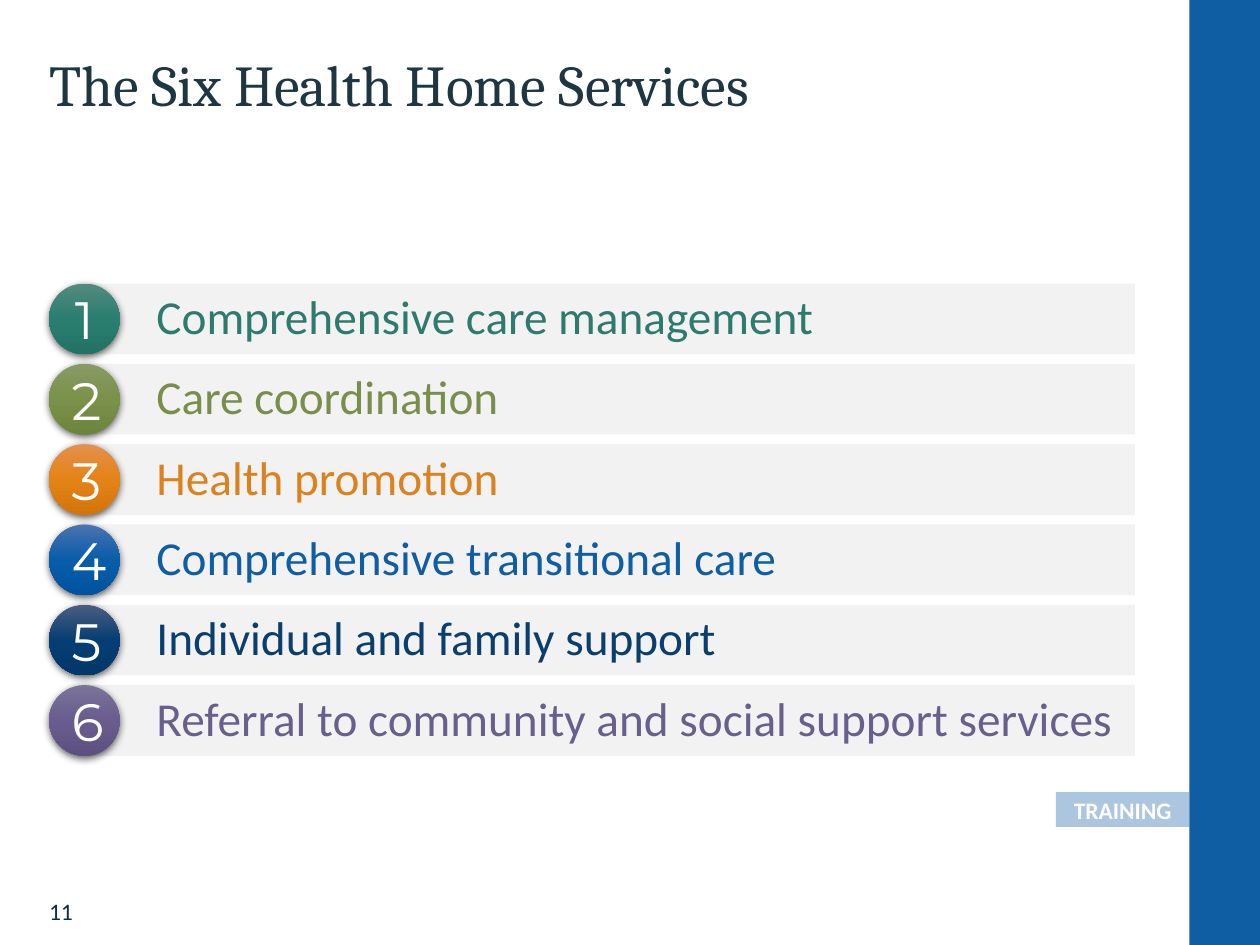
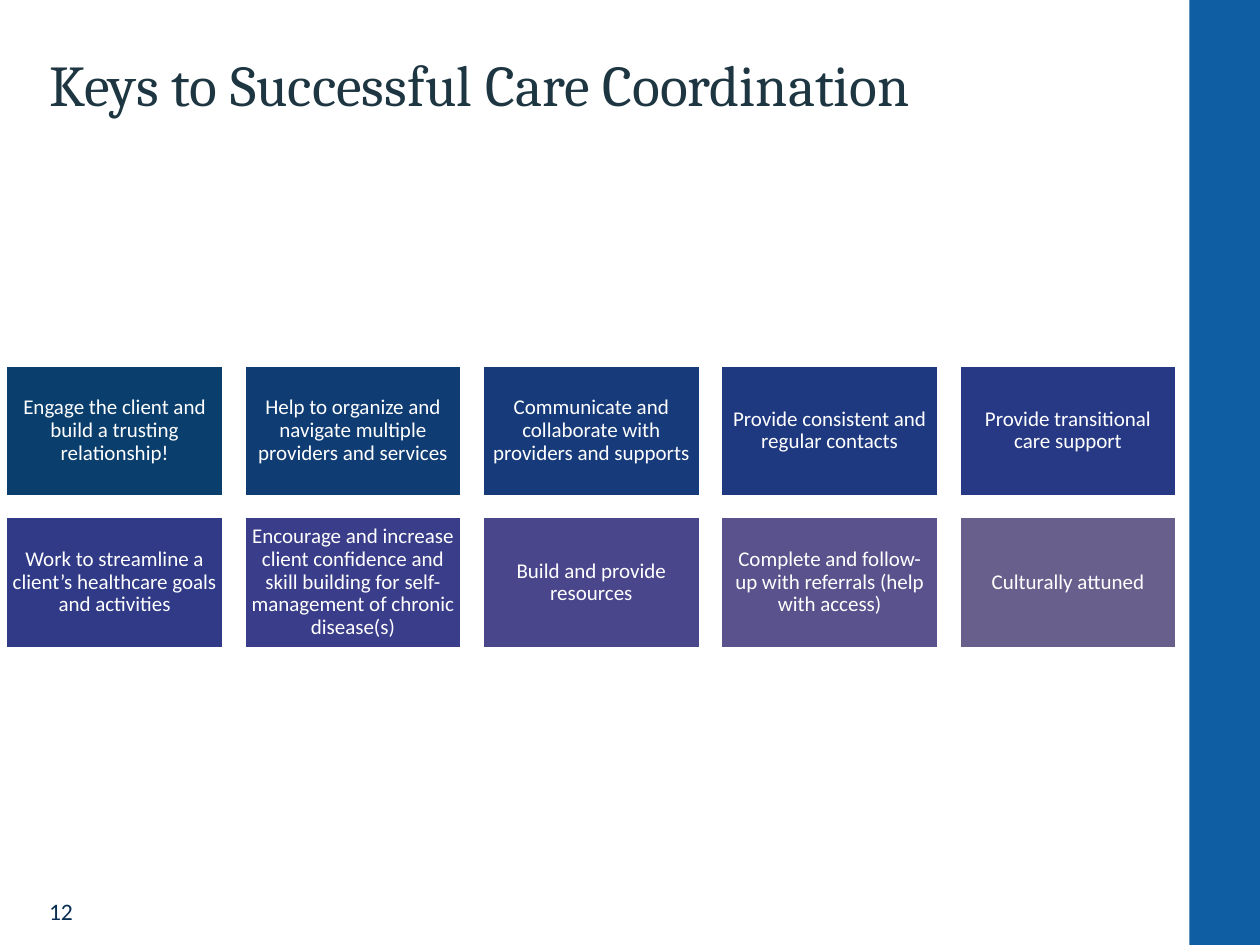
from dataclasses import dataclass

from lxml import etree
from pptx import Presentation
from pptx.dml.color import RGBColor
from pptx.enum.shapes import MSO_SHAPE
from pptx.enum.text import MSO_ANCHOR, PP_ALIGN
from pptx.oxml.ns import qn
from pptx.util import Pt

RECTANGLE, ELLIPSE = MSO_SHAPE.RECTANGLE, MSO_SHAPE.OVAL
TOP, MIDDLE = MSO_ANCHOR.TOP, MSO_ANCHOR.MIDDLE
LEFT, CENTER = PP_ALIGN.LEFT, PP_ALIGN.CENTER

SERVICES_TITLE = "The Six Health Home Services"
SERVICES = [
    ("Comprehensive care management", "2E7A6D", ("548A7F", "2A7E70", "227365")),
    ("Care coordination", "798E4C", ("899B65", "7A9149", "6E843E")),
    ("Health promotion", "DB821E", ("E4904E", "E48315", "D3740A")),
    ("Comprehensive transitional care", "0F5DA3", ("4C72AF", "085DAA", "00539E")),
    ("Individual and family support", "0A3E6D", ("4B5D80", "053E72", "00386A")),
    ("Referral to community and social support services", "695F8C",
     ("7B7399", "685D8E", "5B5080")),
]
TAG = "TRAINING"

KEYS_TITLE = "Keys to Successful Care Coordination"
KEYS = [
    ("Engage the client and build a trusting relationship!", "0A3E6D"),
    ("Help to organize and navigate multiple providers and services", "103C74"),
    ("Communicate and collaborate with providers and supports", "163A7A"),
    ("Provide consistent and regular contacts", "1E3980"),
    ("Provide transitional care support", "273984"),
    ("Work to streamline a client’s healthcare goals and activities", "303A87"),
    ("Encourage and increase client confidence and skill building for "
     "self-management of chronic disease(s)", "3A3D8A"),
    ("Build and provide resources", "4A468C"),
    ("Complete and follow-up with referrals (help with access)", "5A528C"),
    ("Culturally attuned", "695F8C"),
]
KEY_COLUMNS = 5


@dataclass(frozen=True)
class Theme:
    heading_font: str = "Cambria"
    body_font: str = "Calibri"
    number_font: str = "Montserrat"
    band: str = "0F5DA3"
    title: str = "1D3641"
    page: str = "082E52"
    bar: str = "808080"
    white: str = "FFFFFF"
    shadow: str = "000000"
    title_size: float = 33
    service_size: float = 27
    number_size: float = 30
    small_size: float = 13.5
    key_size: float = 12


THEME = Theme()
SLIDE_WIDTH, SLIDE_HEIGHT = 720, 540
MARGIN = 28
BAND_LEFT = 679.6
CONTENT_WIDTH = 620.6


def add_color(parent, color, opacity=100):
    element = etree.SubElement(parent, qn("a:srgbClr"), val=color)
    etree.SubElement(element, qn("a:alpha"), val=str(opacity * 1000))


def add_box(slide, box, fill, kind=RECTANGLE, line=None, opacity=100):
    shape = slide.shapes.add_shape(kind, *map(Pt, box))
    shape.shadow.inherit = False
    shape.fill.solid()
    shape.fill.fore_color.rgb = RGBColor.from_string(fill)
    if opacity < 100:
        solid = shape._element.spPr.find(qn("a:solidFill"))
        solid.clear()
        add_color(solid, fill, opacity)
    if line:
        shape.line.color.rgb = RGBColor.from_string(line)
        shape.line.width = Pt(1)
    else:
        shape.line.fill.background()
    return shape


def write(shape, text, size, color, font=THEME.body_font, align=LEFT, anchor=MIDDLE,
          insets=(0, 0, 0, 0), spacing=1.0, bold=False, wrap=True):
    frame = shape.text_frame
    frame.word_wrap = wrap
    frame.vertical_anchor = anchor
    (frame.margin_left, frame.margin_top,
     frame.margin_right, frame.margin_bottom) = map(Pt, insets)
    paragraph = frame.paragraphs[0]
    paragraph.text = text
    paragraph.alignment = align
    paragraph.line_spacing = spacing
    paragraph.font.name = font
    paragraph.font.size = Pt(size)
    paragraph.font.bold = bold
    paragraph.font.color.rgb = RGBColor.from_string(color)


def add_text(slide, box, text, size, color, **style):
    write(slide.shapes.add_textbox(*map(Pt, box)), text, size, color, **style)


def add_slide(presentation, title, page_number):
    slide = presentation.slides.add_slide(presentation.slide_layouts[6])
    add_box(slide, (BAND_LEFT, 0, SLIDE_WIDTH - BAND_LEFT, SLIDE_HEIGHT), THEME.band)
    add_text(slide, (MARGIN, 505, 40, 31), str(page_number), THEME.small_size, THEME.page)
    add_text(slide, (MARGIN, 32.4, CONTENT_WIDTH, 65.5), title, THEME.title_size,
             THEME.title, font=THEME.heading_font, anchor=TOP, spacing=0.9)
    return slide


def add_badge(slide, box, number, gradient):
    badge = add_box(slide, box, gradient[1], ELLIPSE)
    badge.fill.gradient()
    badge.fill.gradient_angle = 270
    properties = badge._element.spPr
    stops = properties.find(".//" + qn("a:gsLst"))
    stops.clear()
    for position, color in zip((0, 50, 100), gradient):
        stop = etree.SubElement(stops, qn("a:gs"), pos=str(position * 1000))
        add_color(stop, color)
    shadow = etree.SubElement(
        properties.find(qn("a:effectLst")), qn("a:outerShdw"),
        blurRad=str(Pt(4.5)), dist=str(Pt(1.5)), dir="5400000", rotWithShape="0")
    add_color(shadow, THEME.shadow, 63)
    write(badge, str(number), THEME.number_size, THEME.white, font=THEME.number_font,
          align=CENTER, insets=(7.2, 3.6, 7.2, 3.6))


def build_services(presentation):
    slide = add_slide(presentation, SERVICES_TITLE, 11)
    first_top, pitch, height = 162, 45.9, 40.4
    bar_left = MARGIN + height / 2 - 2
    for index, (service, color, gradient) in enumerate(SERVICES):
        top = first_top + index * pitch
        bar = add_box(slide, (bar_left, top, MARGIN + CONTENT_WIDTH - bar_left, height),
                      THEME.bar, opacity=10)
        write(bar, service, THEME.service_size, color, insets=(43.2, 0, 7.2, 3.6))
        add_badge(slide, (MARGIN, top, height, height), index + 1, gradient)
    tag_width = 76.2
    tag = add_box(slide, (BAND_LEFT - tag_width, 452.6, tag_width, 20), THEME.band, opacity=35)
    write(tag, TAG, THEME.small_size, THEME.white, align=CENTER, bold=True, wrap=False)


def build_keys(presentation):
    slide = add_slide(presentation, KEYS_TITLE, 12)
    left, top, width, height, gap = 3.6, 209, 123.8, 74.3, 12.4
    for index, (key, color) in enumerate(KEYS):
        row, column = divmod(index, KEY_COLUMNS)
        box = (left + column * (width + gap), top + row * (height + gap), width, height)
        card = add_box(slide, box, color, line=THEME.white)
        write(card, key, THEME.key_size, THEME.white, align=CENTER,
              insets=(3.6, 3.6, 3.6, 3.6), spacing=0.9)


def main():
    presentation = Presentation()
    presentation.slide_width, presentation.slide_height = Pt(SLIDE_WIDTH), Pt(SLIDE_HEIGHT)
    build_services(presentation)
    build_keys(presentation)
    presentation.save("out.pptx")


if __name__ == "__main__":
    main()
